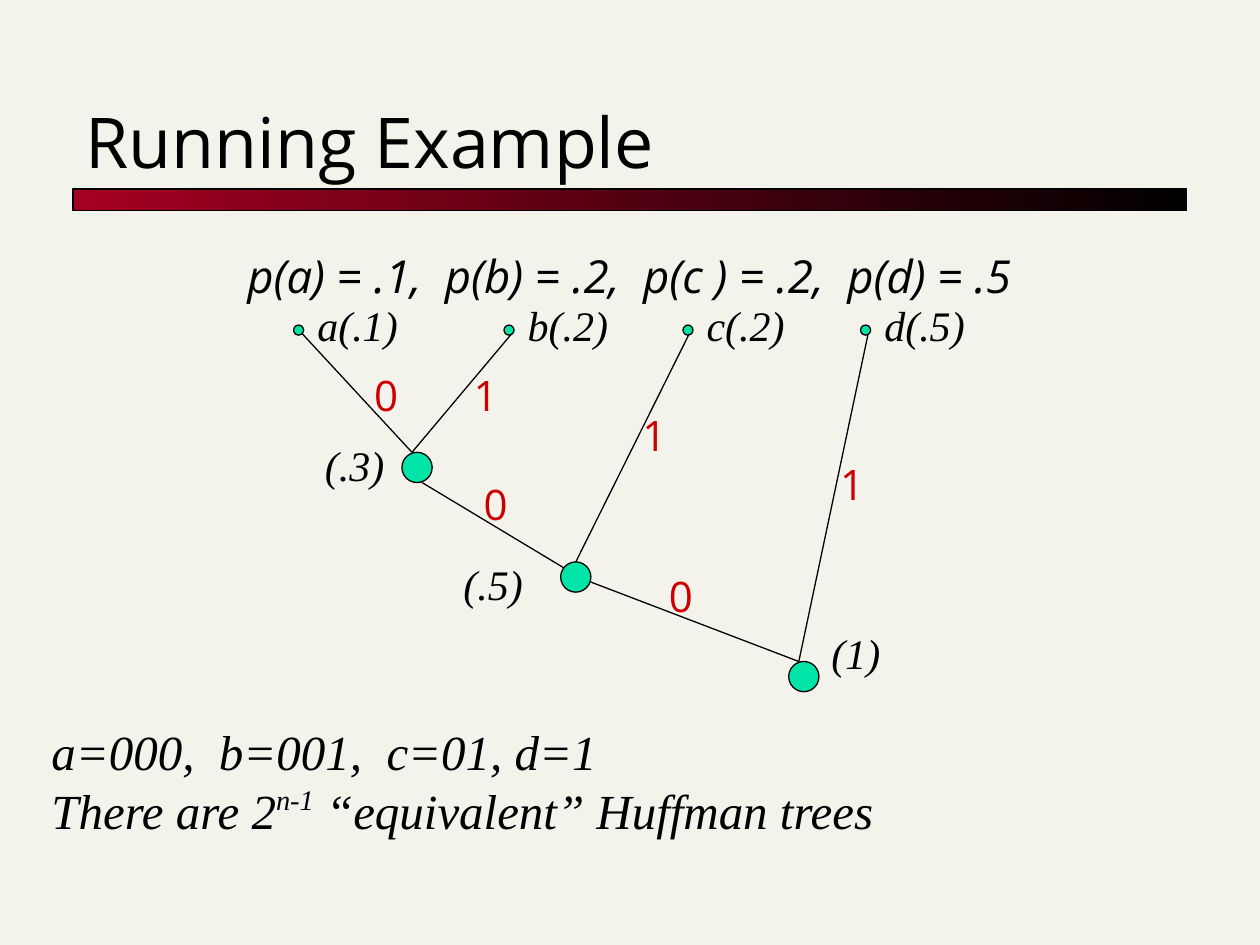
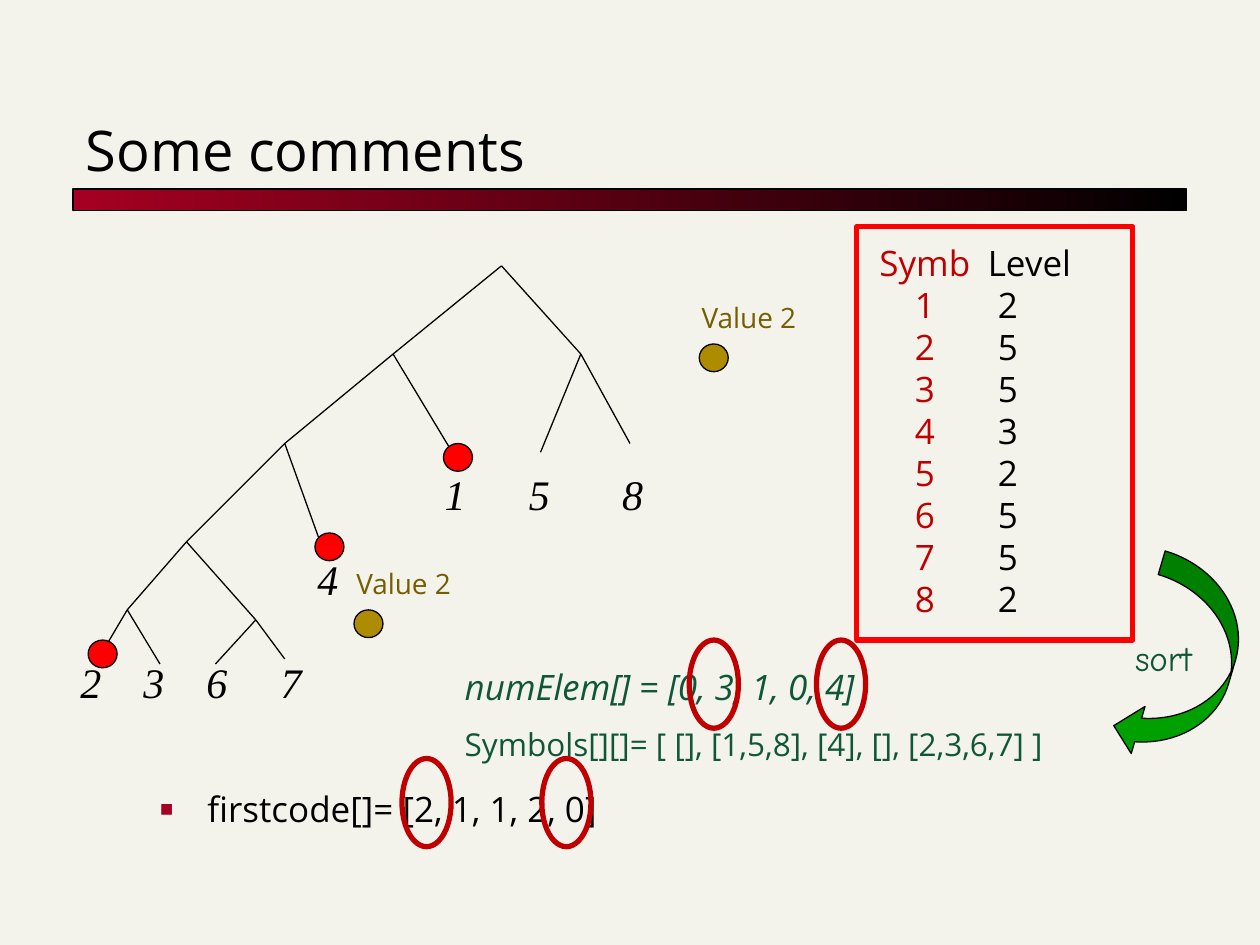
from lxml.etree import SubElement
from pptx import Presentation
from pptx.dml.color import RGBColor
from pptx.enum.shapes import MSO_CONNECTOR, MSO_SHAPE as SHAPE
from pptx.enum.text import MSO_ANCHOR as ANCHOR, MSO_AUTO_SIZE as FIT, PP_ALIGN as ALIGN
from pptx.oxml.ns import qn
from pptx.util import Emu, Pt

PX = 9144
SANS, SERIF, HAND = "Open Sans", "Times New Roman", "Comic Neue"
PAPER, BLACK, WINE, MINT = "F4F3EB", "000000", "A50021", "00E4A8"
BIT_RED, RED, DARK_RED = "CC0000", "FF0000", "C00000"
GREEN, ARROW_GREEN, GOLD, BROWN = "105638", "00A000", "AD8C01", "745E00"
NO_GRID_STYLE = "{2D5ABB26-0587-4C30-8999-92F81FD0307C}"


def px(*values):
    return [Emu(v * PX) for v in values]


def rgb(color):
    return RGBColor.from_string(color)


def write(p, text, size=24, font=SANS, color=BLACK, italic=False, align=None,
          before=None, spacing=None, sup=False):
    r = p.add_run()
    r.text = text
    f = r.font
    f.size, f.name, f.italic = Pt(size), font, italic
    f.color.rgb = rgb(color)
    if sup:
        f._element.set("baseline", "40000")
    if align is not None:
        p.alignment = align
    if before is not None:
        p.space_before = Pt(before)
    if spacing is not None:
        p.line_spacing = spacing


def text_frame(s, x, y, w, h):
    tf = s.shapes.add_textbox(*px(x, y, w, h)).text_frame
    tf.word_wrap = True
    return tf


def label(s, x, y, text, w=100, h=50, **fmt):
    write(text_frame(s, x, y, w, h).paragraphs[0], text, **fmt)


def place(sp, x, y, w, h):
    sp.left, sp.top, sp.width, sp.height = px(x, y, w, h)
    sp.text_frame.auto_size = FIT.NONE
    return sp.text_frame


def bullet(p, char=None, color=None, percent=None):
    pPr = p._p.get_or_add_pPr()
    if char is None:
        SubElement(pPr, qn("a:buNone"))
        return
    clr = SubElement(pPr, qn("a:buClr"))
    SubElement(clr, qn("a:srgbClr"), val=color)
    SubElement(pPr, qn("a:buSzPct"), val=str(percent * 1000))
    SubElement(pPr, qn("a:buFont"), typeface=SANS)
    SubElement(pPr, qn("a:buChar"), char=char)


def shape(s, kind, x, y, w, h, fill=None, line=BLACK, weight=0.75):
    sp = s.shapes.add_shape(kind, *px(x, y, w, h))
    sp.shadow.inherit = False
    if fill:
        sp.fill.solid()
        sp.fill.fore_color.rgb = rgb(fill)
    else:
        sp.fill.background()
    sp.line.color.rgb = rgb(line)
    sp.line.width = Pt(weight)
    return sp


def edge(s, start, end):
    c = s.shapes.add_connector(MSO_CONNECTOR.STRAIGHT, *px(*start, *end))
    c.line.color.rgb = rgb(BLACK)
    c.line.width = Pt(0.75)
    SubElement(c._element.spPr, qn("a:effectLst"))


def band(s):
    fill = shape(s, SHAPE.RECTANGLE, 58, 150, 884, 17).fill
    fill.gradient()
    fill.gradient_angle = 0
    for stop, color, position in zip(fill.gradient_stops, (WINE, BLACK), (0, 1)):
        stop.color.rgb = rgb(color)
        stop.position = position


def new_slide(prs, title, size):
    s = prs.slides.add_slide(prs.slide_layouts[1])
    band(s)
    tf = place(s.shapes.title, 58, 42, 883, 108)
    tf.vertical_anchor = ANCHOR.BOTTOM
    write(tf.paragraphs[0], title, size=size, align=ALIGN.LEFT)
    return s


def level_table(s, x, y, levels):
    table = s.shapes.add_table(len(levels) + 1, 2, *px(x, y, 180, 300)).table
    table._tbl.tblPr[0].text = NO_GRID_STYLE
    table.first_row = table.horz_banding = False
    for column, width in zip(table.columns, px(84, 96)):
        column.width = width
    rows = [("Symb", "Level"), *enumerate(levels, 1)]
    styles = [(DARK_RED, ALIGN.CENTER, 0), (BLACK, ALIGN.LEFT, 8)]
    for i, row in enumerate(rows):
        for j, (color, align, margin) in enumerate(styles):
            cell = table.cell(i, j)
            cell.fill.background()
            if i and j:
                margin += 8
            cell.margin_left, cell.margin_right, cell.margin_top, cell.margin_bottom = px(margin, 0, 0, 0)
            write(cell.text_frame.paragraphs[0], str(row[j]), size=20, color=color,
                  align=align, spacing=Pt(24))


def huffman_slide(prs):
    s = new_slide(prs, "Running Example", 40)
    p = place(s.placeholders[1], 75, 192, 850, 533).paragraphs[0]
    write(p, "p(a) = .1,  p(b) = .2,  p(c ) = .2,  p(d) = .5", size=26, italic=True,
          align=ALIGN.CENTER)
    bullet(p)

    for x, text in [(233, "a(.1)"), (400, "b(.2)"), (542, "c(.2)"), (683, "d(.5)")]:
        shape(s, SHAPE.OVAL, x, 258, 8, 8, fill=MINT)
        label(s, x + 9, 233, text, font=SERIF, italic=True)

    for start, end in [((240, 265), (327, 359)), ((406, 265), (327, 359)),
                       ((335, 383), (453, 454)), ((547, 265), (453, 454)),
                       ((469, 462), (634, 525)), ((689, 265), (634, 525))]:
        edge(s, start, end)

    for x, y, text, text_x, text_y in [(319, 359, "(.3)", 248, 344),
                                       (445, 446, "(.5)", 358, 438),
                                       (626, 525, "(1)", 650, 493)]:
        shape(s, SHAPE.OVAL, x, y, 24, 24, fill=MINT)
        label(s, text_x, text_y, text, font=SERIF, italic=True)

    for x, y, bit in [(287, 288, "0"), (366, 288, "1"), (374, 375, "0"),
                      (500, 320, "1"), (521, 448, "0"), (657, 359, "1")]:
        label(s, x, y, bit, w=41, color=BIT_RED)

    tf = text_frame(s, 31, 568, 720, 103)
    fmt = dict(size=28, font=SERIF, italic=True)
    write(tf.paragraphs[0], "a=000,  b=001,  c=01, d=1", **fmt)
    p = tf.add_paragraph()
    write(p, "There are 2", **fmt)
    write(p, "n-1", sup=True, **fmt)
    write(p, " “equivalent” Huffman trees", **fmt)


def draw_code_tree(s):
    root, left, right = (398, 211), (312, 281), (461, 281)
    third, fourth, low_left, low_right = (226, 352), (148, 430), (101, 484), (203, 492)
    children = {
        root: [left, right],
        left: [third, (359, 359)],
        right: [(429, 359), (500, 352)],
        third: [fourth, (257, 438)],
        fourth: [low_left, low_right],
        low_left: [(78, 523), (127, 527)],
        low_right: [(171, 527), (226, 523)],
    }
    for parent, ends in children.items():
        for end in ends:
            edge(s, parent, end)
    for x, y in [(70, 508), (250, 423), (352, 352)]:
        shape(s, SHAPE.OVAL, x, y, 23, 22, fill=RED)
    for x, y, leaf in [(54, 516, "2"), (104, 516, "3"), (154, 516, "6"), (213, 516, "7"),
                       (242, 434, "4"), (343, 367, "1"), (410, 367, "5"), (484, 367, "8")]:
        label(s, x, y, leaf, w=40, font=SERIF, italic=True)


def comments_slide(prs):
    s = new_slide(prs, "Some comments", 32)
    draw_code_tree(s)

    p = place(s.placeholders[1], 117, 610, 859, 140).paragraphs[0]
    write(p, "firstcode[]= [2, 1, 1, 2, 0]", size=20, spacing=1.3)
    bullet(p, "■", WINE, 40)

    level_table(s, 692, 194, [2, 5, 5, 3, 2, 5, 5, 2])
    shape(s, SHAPE.RECTANGLE, 680, 180, 219, 328, line=RED, weight=3)

    tf = text_frame(s, 359, 523, 526, 130)
    write(tf.paragraphs[0], "numElem[] = [0, 3, 1, 0, 4]", size=20, color=GREEN,
          italic=True, before=4)
    write(tf.add_paragraph(), "Symbols[][]= [ [], [1,5,8], [4], [], [2,3,6,7] ]", size=18,
          color=GREEN, before=4, spacing=1.3)

    arrow = shape(s, SHAPE.CURVED_DOWN_ARROW, 857, 488, 164, 78, fill=ARROW_GREEN)
    arrow.rotation = 106.4
    label(s, 891, 500, "sort", w=75, h=44, size=20, font=HAND, color=GREEN)

    for x, y in [(319, 602), (430, 602), (547, 508), (648, 508)]:
        shape(s, SHAPE.OVAL, x, y, 39, 70, line=DARK_RED, weight=3)

    for x, y in [(547, 234), (273, 445)]:
        label(s, x, y, "Value 2", w=110, h=37, size=16, color=BROWN)
        shape(s, SHAPE.OVAL, x + 8, y + 39, 23, 22, fill=GOLD)


def main():
    prs = Presentation()
    prs.slide_width, prs.slide_height = px(1000, 750)
    fill = prs.slide_master.background.fill
    fill.solid()
    fill.fore_color.rgb = rgb(PAPER)
    huffman_slide(prs)
    comments_slide(prs)
    prs.save("out.pptx")


if __name__ == "__main__":
    main()
